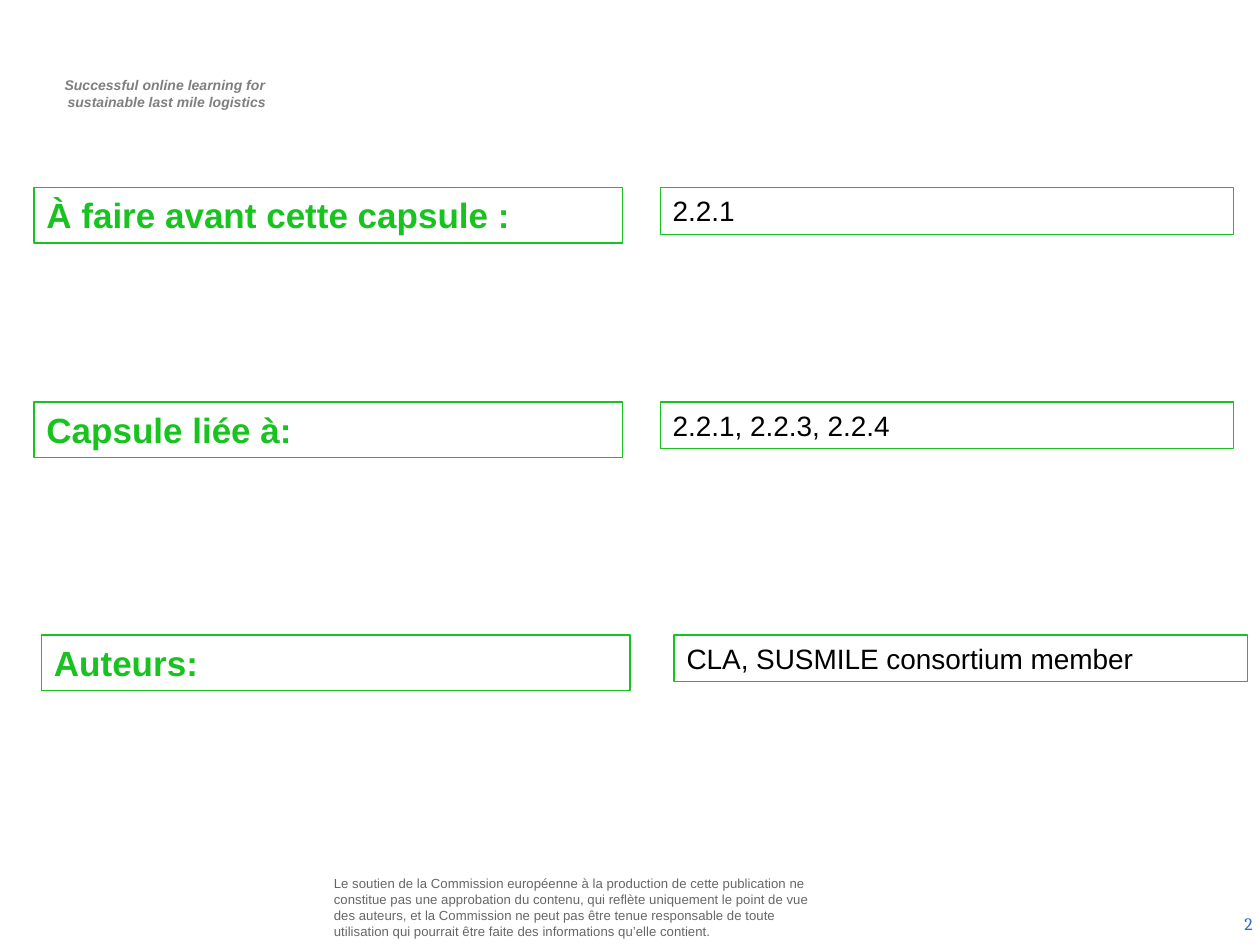
import pptx
import pptx.dml.color
import pptx.enum.shapes
import pptx.enum.text
import pptx.util

ALIGN = pptx.enum.text.PP_ALIGN
ANCHOR = pptx.enum.text.MSO_ANCHOR


def color(value):
    """Turn a hex string into a colour."""
    return pptx.dml.color.RGBColor.from_string(value)


class CapsuleSlide:
    """Draw text and framed boxes on a grid of 100 columns by 75 rows."""

    GREEN, BLACK, WHITE = "18C320", "000000", "FFFFFF"
    FONT = "Arial"

    def __init__(self, presentation):
        self.slide = presentation.slides.add_slide(presentation.slide_layouts[6])
        self.column = presentation.slide_width / 100
        self.row = presentation.slide_height / 75

    def place(self, left, top, width, height):
        return (round(left * self.column), round(top * self.row),
                round(width * self.column), round(height * self.row))

    def set_text(self, shape, text, size, font_color, font=FONT, bold=False,
                 italic=False, align=ALIGN.LEFT, anchor=ANCHOR.TOP,
                 margins=(0.1, 0.05), grow=False, indent=0):
        frame = shape.text_frame
        frame.text = text
        frame.word_wrap = True
        frame.vertical_anchor = anchor
        frame.margin_left = frame.margin_right = pptx.util.Inches(margins[0])
        frame.margin_top = frame.margin_bottom = pptx.util.Inches(margins[1])
        if grow:
            frame.auto_size = pptx.enum.text.MSO_AUTO_SIZE.SHAPE_TO_FIT_TEXT
        for paragraph in frame.paragraphs:
            paragraph.alignment = align
            if indent:
                properties = paragraph._p.get_or_add_pPr()
                properties.set("marL", str(pptx.util.Inches(indent)))
            for run in paragraph.runs:
                run.font.name = font
                run.font.size = pptx.util.Pt(size)
                run.font.bold = bold
                run.font.italic = italic
                run.font.color.rgb = color(font_color)

    def text(self, place, text, size, font_color, **style):
        box = self.slide.shapes.add_textbox(*self.place(*place))
        self.set_text(box, text, size, font_color, **style)

    def framed(self, place, text, size, font_color, **style):
        rectangle = self.slide.shapes.add_shape(
            pptx.enum.shapes.MSO_SHAPE.RECTANGLE, *self.place(*place))
        rectangle.shadow.inherit = False
        rectangle.fill.solid()
        rectangle.fill.fore_color.rgb = color(self.WHITE)
        rectangle.line.color.rgb = color(self.GREEN)
        rectangle.line.width = pptx.util.Pt(0.75)
        self.set_text(rectangle, text, size, font_color, grow=True, **style)

    def entry(self, top, label_left, label, value_left, value):
        self.framed((label_left, top, 46.7, 4.4), label, 20, self.GREEN, bold=True)
        self.framed((value_left, top, 45.5, 3.7), value, 16, self.BLACK)


def main():
    presentation = pptx.Presentation()
    presentation.slide_width = pptx.util.Inches(10)
    presentation.slide_height = pptx.util.Inches(7.5)
    slide = CapsuleSlide(presentation)

    slide.text((2.9, 5.6, 20.3, 3.7),
               "Successful online learning for \nsustainable last mile logistics",
               8, "7F7F7F", bold=True, italic=True, align=ALIGN.CENTER,
               grow=True, indent=0.04)
    slide.text((26.1, 69.5, 39.8, 5),
               "Le soutien de la Commission européenne à la production de cette "
               "publication ne constitue pas une approbation du contenu, qui "
               "reflète uniquement le point de vue des auteurs, et la Commission "
               "ne peut pas être tenue responsable de toute utilisation qui "
               "pourrait être faite des informations qu’elle contient.",
               7.5, "666666", anchor=ANCHOR.MIDDLE, margins=(0.04, 0.04))
    slide.text((77.1, 71.3, 23.3, 4), "2", 10, "3366CC", font="Cambria",
               align=ALIGN.RIGHT, anchor=ANCHOR.MIDDLE)

    for entry in (
        (14.9, 2.7, "À faire avant cette capsule :", 52.4, "2.2.1"),
        (31.9, 2.7, "Capsule liée à:", 52.4, "2.2.1, 2.2.3, 2.2.4"),
        (50.4, 3.3, "Auteurs:", 53.5, "CLA, SUSMILE consortium member"),
    ):
        slide.entry(*entry)

    presentation.save("out.pptx")


if __name__ == "__main__":
    main()
